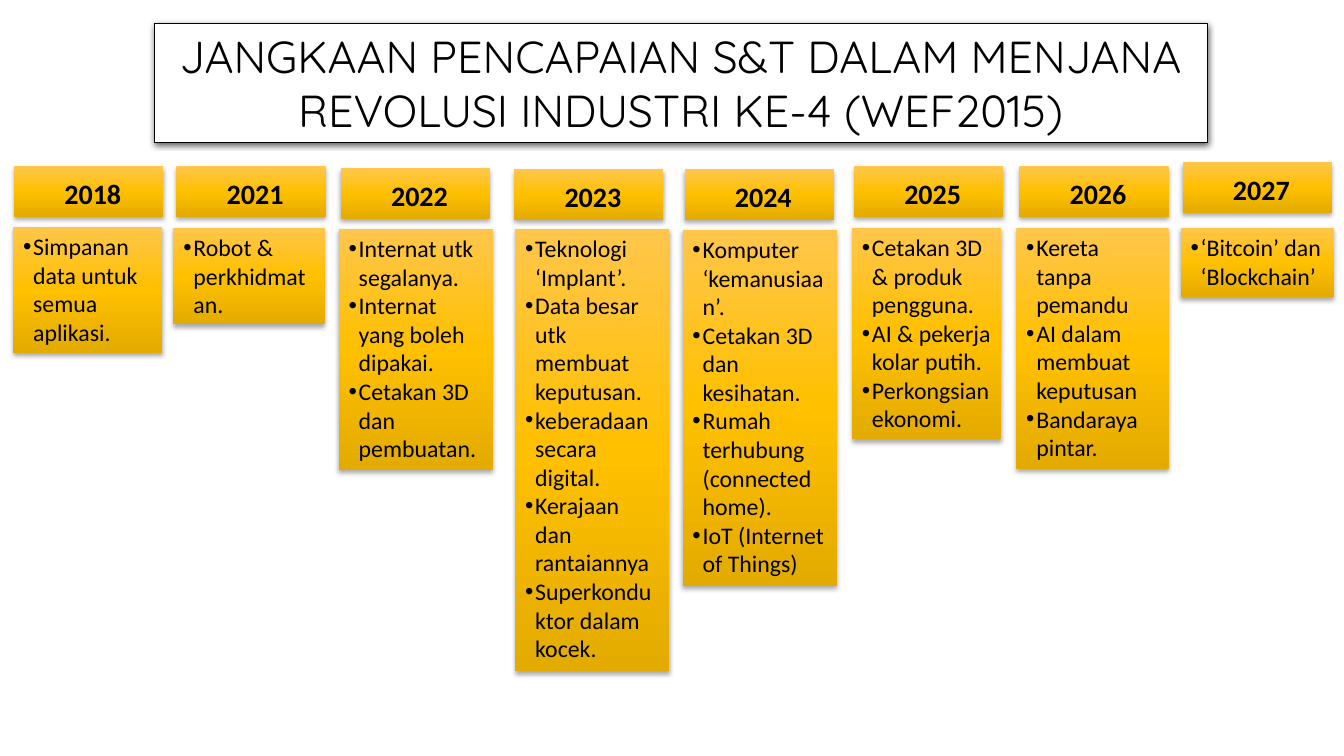
"""Build a one-slide timeline of expected science and technology achievements."""
from lxml.etree import SubElement
from pptx import Presentation
from pptx.dml.color import RGBColor
from pptx.enum.shapes import MSO_SHAPE
from pptx.enum.text import MSO_ANCHOR, PP_ALIGN
from pptx.oxml.ns import qn
from pptx.util import Inches, Pt

TITLE = "JANGKAAN PENCAPAIAN S&T DALAM MENJANA REVOLUSI INDUSTRI KE-4 (WEF2015)"
GOLD_STOPS = [(0, "FFC64B"), (50, "FFC000"), (100, "E3AB00")]
HEADER_SIZE = (1.48, 0.5)

# year, (header left, top), (list left, top, width, height), achievements
COLUMNS = [
    ("2018", (0.14, 1.65), (0.13, 2.25, 1.48, 1.25),
     ["Simpanan data untuk semua aplikasi."]),
    ("2021", (1.75, 1.65), (1.72, 2.26, 1.5, 0.96),
     ["Robot & perkhidmatan."]),
    ("2022", (3.38, 1.67), (3.36, 2.27, 1.53, 2.39),
     ["Internat utk segalanya.", "Internat yang boleh dipakai.",
      "Cetakan 3D dan pembuatan."]),
    ("2023", (5.1, 1.68), (5.11, 2.27, 1.53, 4.39),
     ["Teknologi ‘Implant’.", "Data besar utk membuat keputusan.",
      "keberadaan secara digital.", "Kerajaan dan rantaiannya",
      "Superkonduktor dalam kocek."]),
    ("2024", (6.79, 1.68), (6.77, 2.28, 1.53, 3.53),
     ["Komputer ‘kemanusiaan’.", "Cetakan 3D dan kesihatan.",
      "Rumah terhubung (connected home).", "IoT (Internet of Things)"]),
    ("2025", (8.47, 1.65), (8.45, 2.26, 1.48, 2.1),
     ["Cetakan 3D & produk pengguna.", "AI & pekerja kolar putih.",
      "Perkongsian ekonomi."]),
    ("2026", (10.11, 1.65), (10.08, 2.26, 1.51, 2.39),
     ["Kereta tanpa pemandu", "AI dalam membuat keputusan",
      "Bandaraya pintar."]),
    ("2027", (11.73, 1.61), (11.71, 2.26, 1.52, 0.69),
     ["‘Bitcoin’ dan ‘Blockchain’"]),
]


def color(value):
    return RGBColor.from_string(value)


def add_color(parent, value):
    return SubElement(parent, qn("a:srgbClr"), val=value)


def set_shadow(shape, opacity, blur, distance):
    shape.shadow.inherit = False
    effects = shape._element.spPr.find(qn("a:effectLst"))
    shadow = SubElement(effects, qn("a:outerShdw"), blurRad=str(Pt(blur)),
                        dist=str(Pt(distance)), dir="5400000", rotWithShape="0")
    SubElement(add_color(shadow, "000000"), qn("a:alpha"), val=str(opacity * 1000))


def set_gold_fill(shape):
    shape.fill.gradient()
    shape.fill.gradient_angle = 270
    stop_list = shape._element.spPr.find(qn("a:gradFill")).find(qn("a:gsLst"))
    for stop in list(stop_list):
        stop_list.remove(stop)
    for position, value in GOLD_STOPS:
        add_color(SubElement(stop_list, qn("a:gs"), pos=str(position * 1000)), value)


def style_font(paragraph, name, size, bold=False):
    paragraph.font.name = name
    paragraph.font.size = Pt(size)
    paragraph.font.bold = bold
    paragraph.font.color.rgb = color("000000")


def add_gold_box(slide, left, top, width, height):
    shape = slide.shapes.add_shape(MSO_SHAPE.RECTANGLE, Inches(left), Inches(top),
                                   Inches(width), Inches(height))
    set_gold_fill(shape)
    shape.line.fill.background()
    set_shadow(shape, 32, 3.5, 2.2)
    shape.text_frame.word_wrap = True
    shape.text_frame.vertical_anchor = MSO_ANCHOR.TOP
    return shape


def add_year(slide, year, position):
    frame = add_gold_box(slide, *position, *HEADER_SIZE).text_frame
    frame.margin_left = Inches(0.18)
    frame.margin_top = Inches(0.1)
    frame.text = year
    frame.paragraphs[0].alignment = PP_ALIGN.CENTER
    style_font(frame.paragraphs[0], "Calibri", 20, bold=True)


def add_achievements(slide, achievements, bounds):
    frame = add_gold_box(slide, *bounds).text_frame
    frame.text = "\n".join(achievements)
    for paragraph in frame.paragraphs:
        paragraph.alignment = PP_ALIGN.LEFT
        properties = paragraph._p.get_or_add_pPr()
        properties.set("marL", str(Inches(0.1)))
        properties.set("indent", str(Inches(-0.1)))
        SubElement(properties, qn("a:buFont"), typeface="Arial")
        SubElement(properties, qn("a:buChar"), char="•")
        style_font(paragraph, "Calibri", 17)


def add_title(slide):
    title = slide.shapes.title
    title.left, title.top = Inches(1.53), Inches(0.23)
    title.width, title.height = Inches(10.45), Inches(1.18)
    title.fill.solid()
    title.fill.fore_color.rgb = color("FFFFFF")
    title.line.color.rgb = color("000000")
    title.line.width = Pt(0.75)
    set_shadow(title, 63, 4.5, 1.5)
    title.text_frame.text = TITLE
    title.text_frame.word_wrap = True
    title.text_frame.vertical_anchor = MSO_ANCHOR.MIDDLE
    title.text_frame.paragraphs[0].alignment = PP_ALIGN.CENTER
    style_font(title.text_frame.paragraphs[0], "Quicksand", 32)


def main():
    presentation = Presentation()
    presentation.slide_width = Inches(13.33)
    presentation.slide_height = Inches(7.5)
    slide = presentation.slides.add_slide(presentation.slide_layouts[5])
    add_title(slide)
    for year, header_position, list_bounds, achievements in COLUMNS:
        add_achievements(slide, achievements, list_bounds)
        add_year(slide, year, header_position)
    presentation.save("out.pptx")


if __name__ == "__main__":
    main()
